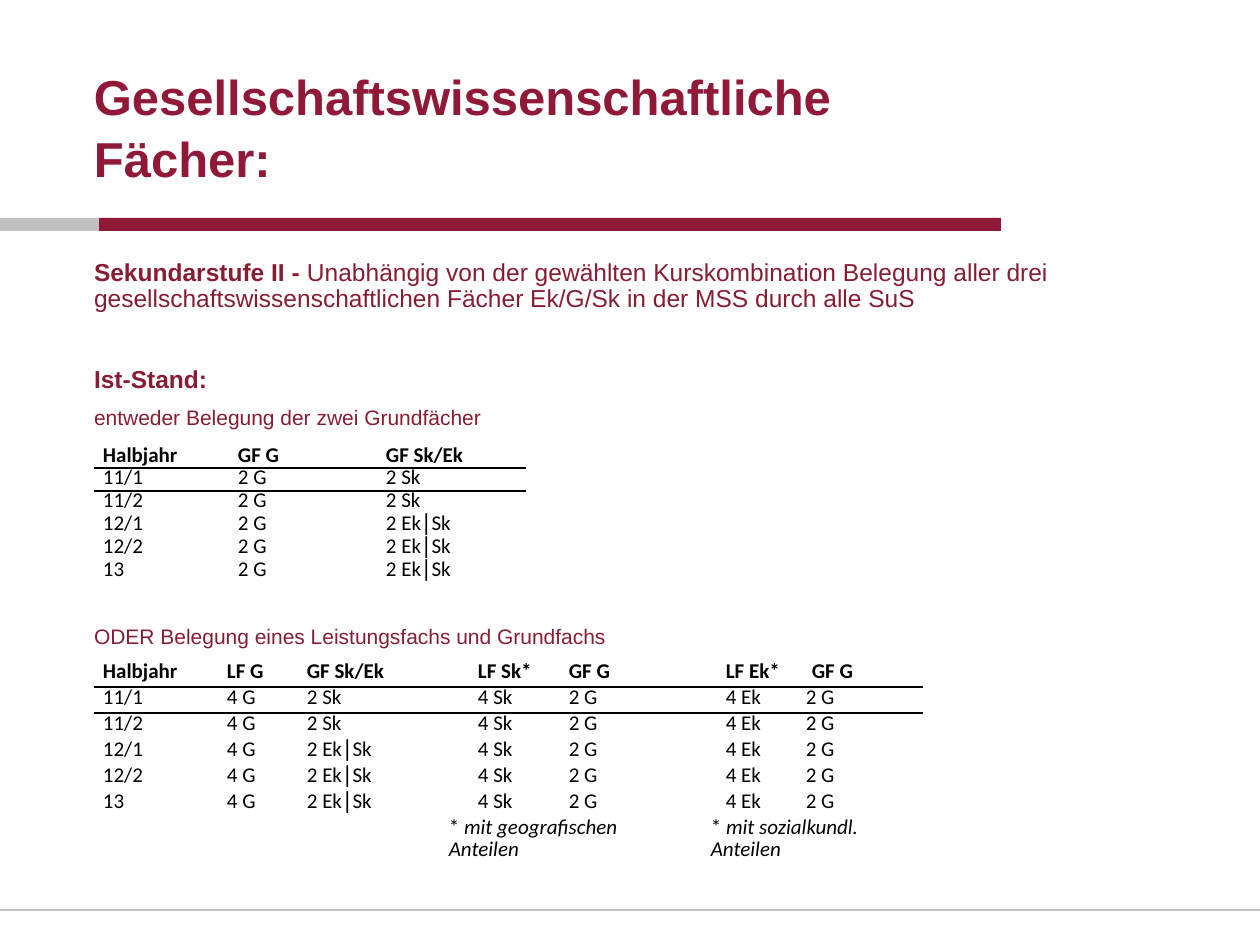
from pptx import Presentation
from pptx.dml.color import RGBColor
from pptx.enum.shapes import MSO_CONNECTOR, MSO_SHAPE
from pptx.enum.text import MSO_ANCHOR
from pptx.oxml import parse_xml
from pptx.oxml.ns import nsdecls, qn
from pptx.util import Emu, Pt

HUES = {"red": "8F1936", "wine": "871D33", "grey": "C0C0C0", "black": "000000"}
PLAIN = "{2D5ABB26-0587-4C30-8999-92F81FD0307C}"


def px(num):
    return Emu(round(num * 914400 / 126))


def add_run(para, text, size, hue, bold=False, face="Arial", slant=False):
    run = para.add_run()
    run.text = text
    font = run.font
    font.name, font.size, font.bold, font.italic = face, Pt(size), bold, slant
    font.color.rgb = RGBColor.from_string(HUES[hue])


deck = Presentation()
deck.slide_width, deck.slide_height = px(1260), px(945)
slide = deck.slides.add_slide(deck.slide_layouts[6])
shapes = slide.shapes

for left, width, hue in [(99, 902, "red"), (0, 99, "grey")]:
    bar = shapes.add_shape(MSO_SHAPE.RECTANGLE, px(left), px(218), px(width), px(13))
    bar.shadow.inherit = False
    bar.fill.solid()
    bar.fill.fore_color.rgb = RGBColor.from_string(HUES[hue])
    bar.line.fill.background()

rule = shapes.add_connector(MSO_CONNECTOR.STRAIGHT, 0, px(910), px(1260), px(910))
rule.line.width = Pt(0.75)
rule.line.color.rgb = RGBColor.from_string(HUES["grey"])
rule._element.spPr.append(parse_xml(f"<a:effectLst {nsdecls('a')}/>"))

texts = [
    (60, 805, 127, MSO_ANCHOR.BOTTOM, 1.05, [
        (0, 28, "red", [("Gesellschaftswissenschaftliche Fächer:", True)])]),
    (260, 1066, 630, MSO_ANCHOR.TOP, 0.9, [
        (0, 14, "wine", [
            ("Sekundarstufe II - ", True),
            ("Unabhängig von der gewählten Kurskombination Belegung aller drei "
             "gesellschaftswissenschaftlichen Fächer Ek/G/Sk in der MSS durch alle SuS", False)]),
        (31, 14, "wine", [("Ist-Stand:", True)]),
        (8, 12, "wine", [("entweder Belegung der zwei Grundfächer", False)]),
        (112, 12, "wine", [("ODER Belegung eines Leistungsfachs und Grundfachs", False)])]),
]
for top, width, height, anchor, pitch, paras in texts:
    frame = shapes.add_textbox(px(94), px(top), px(width), px(height)).text_frame
    frame.word_wrap = True
    frame.vertical_anchor = anchor
    frame.margin_left = frame.margin_right = frame.margin_top = frame.margin_bottom = 0
    for spot, (gap, size, hue, runs) in enumerate(paras):
        para = frame.add_paragraph() if spot else frame.paragraphs[0]
        para.line_spacing = pitch
        para.space_before = Pt(gap)
        for text, bold in runs:
            add_run(para, text, size, hue, bold)

terms = ["11/1", "11/2", "12/1", "12/2", "13"]
mixed = ["2 Sk"] * 2 + ["2 Ek│Sk"] * 3
base = [["Halbjahr", "GF G", "GF Sk/Ek"]]
major = [["Halbjahr", "LF G", "GF Sk/Ek", "LF Sk*", "GF G", "LF Ek*", "GF G"]]
for term, pair in zip(terms, mixed):
    base.append([term, "2 G", pair])
    major.append([term, "4 G", pair, "4 Sk", "2 G", "4 Ek", "2 G"])

grids = [
    (445, [135, 148, 149], [22] * 5 + [46], [0, 0, 0], base),
    (661, [104, 100, 142, 120, 142, 95, 126], [26] * 6 + [52],
     [0, 20, 0, 29, 0, 15, 0], major),
]
for top, cols, rows, dents, data in grids:
    table = shapes.add_table(len(rows), len(cols), px(94), px(top),
                             px(sum(cols)), px(sum(rows))).table
    table.first_row = table.horz_banding = False
    table._tbl.tblPr.find(qn("a:tableStyleId")).text = PLAIN
    for col, width in zip(table.columns, cols):
        col.width = px(width)
    for row, height in zip(table.rows, rows):
        row.height = px(height)
    for cell in table.iter_cells():
        cell.margin_left = cell.margin_right = px(9)
        cell.margin_top = cell.margin_bottom = 0
    for y, line in enumerate(data):
        for x, text in enumerate(line):
            cell = table.cell(y, x)
            para = cell.text_frame.paragraphs[0]
            para.line_spacing = Pt(13)
            dent = 6 if y == 0 and x == 6 else dents[x]
            para._p.get_or_add_pPr().set("marL", str(px(dent)))
            head, mark, tail = text.partition("│")
            for part, bold in [(head, y == 0), (mark, True), (tail, False)]:
                if part:
                    add_run(para, part, 12, "black", bold, "Calibri")
            if y < 2:
                side = "lnT" if y else "lnB"
                cell._tc.get_or_add_tcPr().append(parse_xml(
                    f'<a:{side} {nsdecls("a")} w="{Pt(1.5)}"><a:solidFill>'
                    f'<a:srgbClr val="{HUES["black"]}"/></a:solidFill></a:{side}>'))
    for cell in table.iter_cells():
        cell.fill.background()

notes = [(3, "*", " mit geografischen Anteilen"), (5, "* ", "mit sozialkundl. Anteilen")]
for x, star, text in notes:
    cell = table.cell(6, x)
    cell.merge(table.cell(6, x + 1))
    cell.margin_right = px(24)
    para = cell.text_frame.paragraphs[0]
    para.line_spacing = Pt(13)
    add_run(para, star, 12, "black", face="Calibri")
    add_run(para, text, 12, "black", face="Calibri", slant=True)

deck.save("out.pptx")
